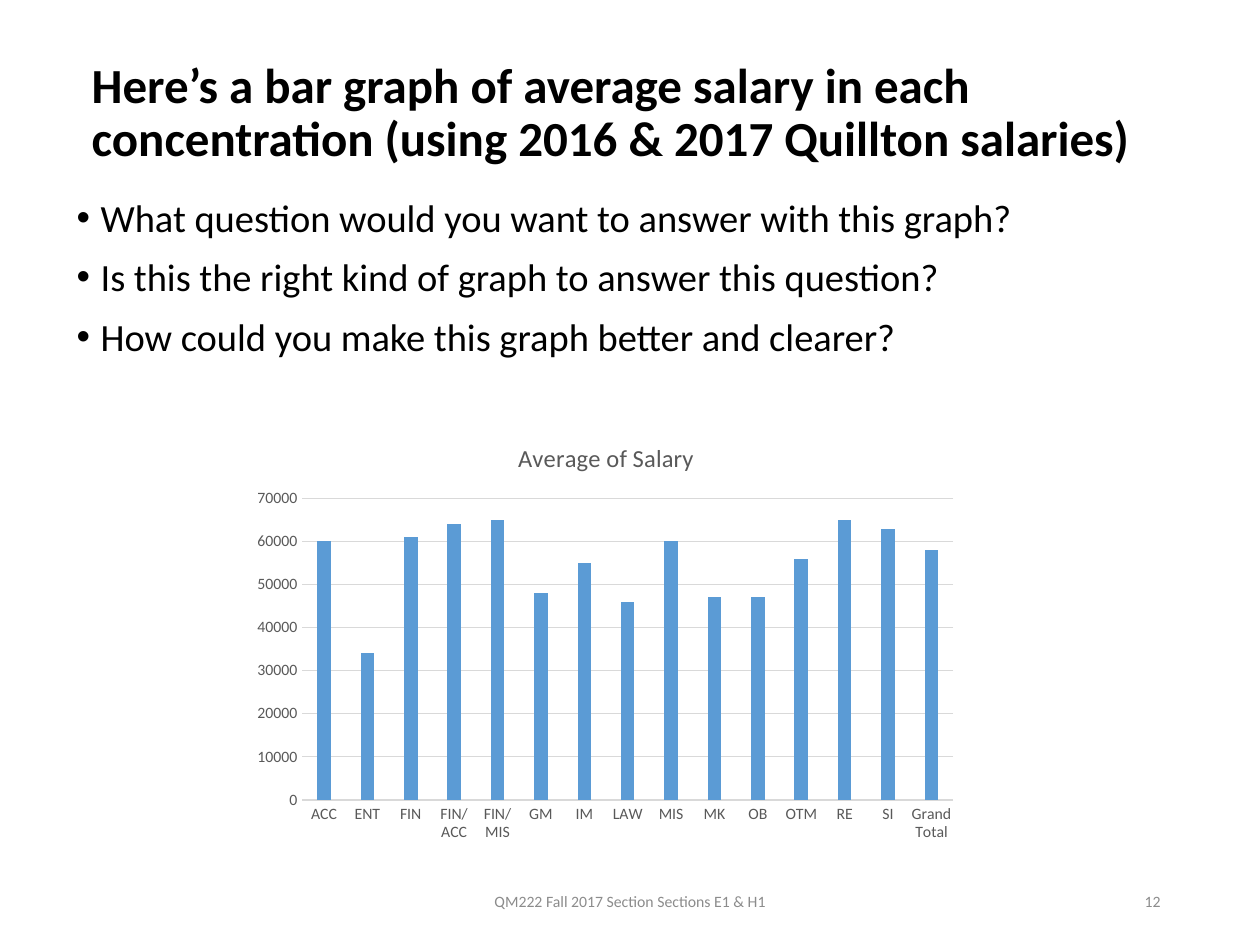
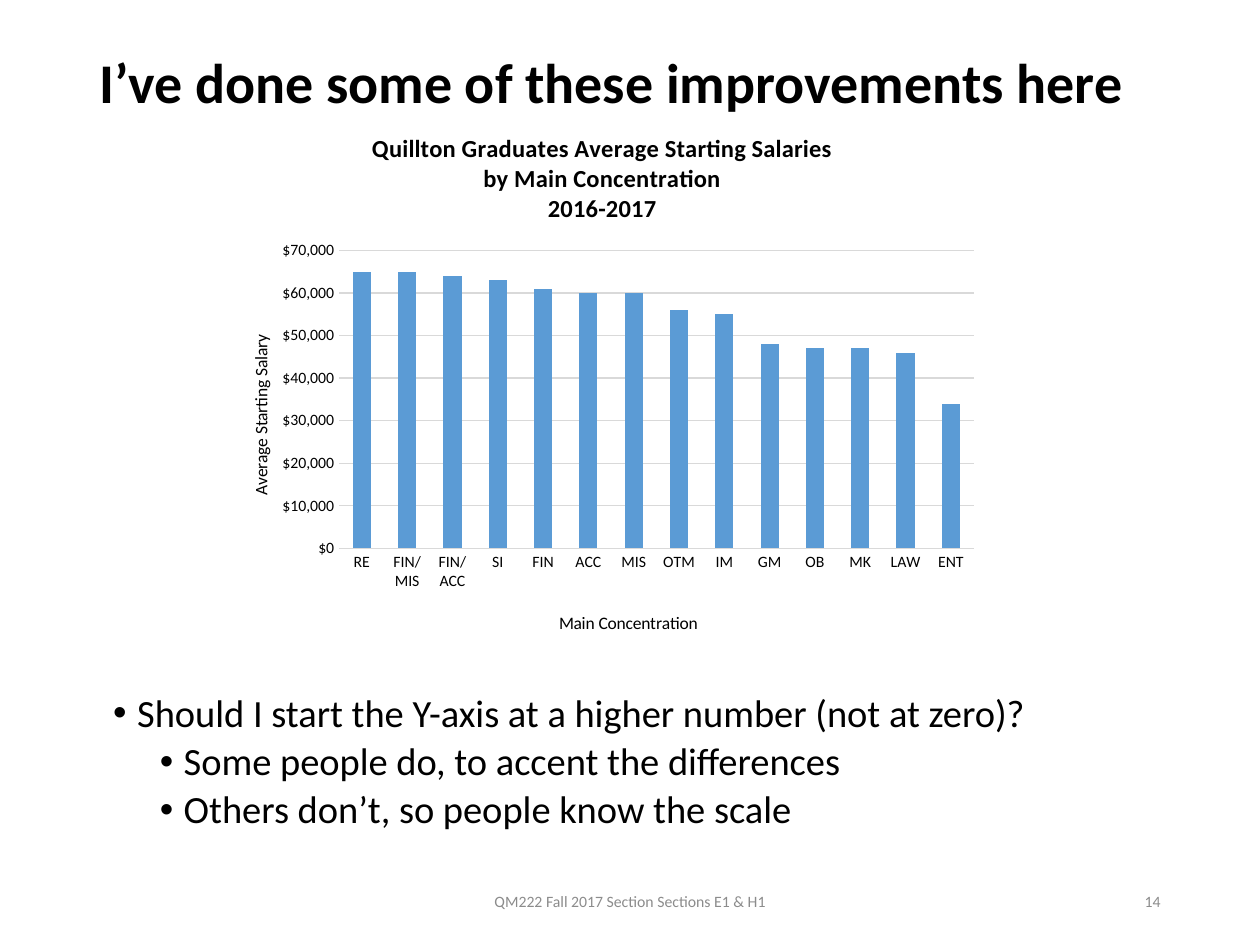
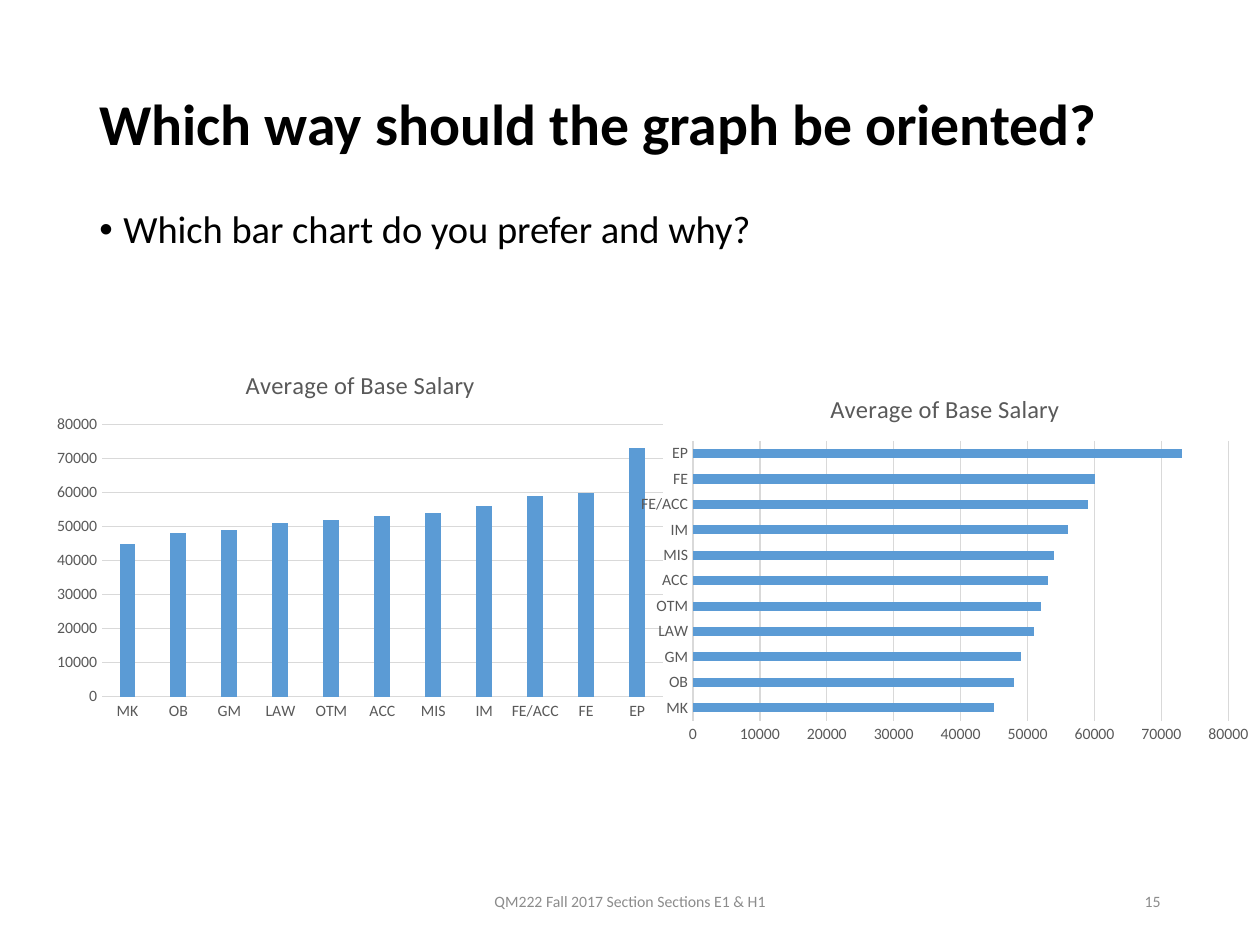
from dataclasses import dataclass

from lxml.etree import SubElement
from pptx import Presentation
from pptx.chart.data import CategoryChartData
from pptx.dml.color import RGBColor
from pptx.enum.chart import XL_CHART_TYPE, XL_TICK_MARK
from pptx.enum.text import MSO_ANCHOR, PP_ALIGN
from pptx.oxml import parse_xml
from pptx.oxml.ns import nsdecls, qn
from pptx.util import Inches, Pt


@dataclass(frozen=True)
class Theme:
    """Colours, font and type sizes shared by all slides."""
    font: str = "Calibri"
    black: RGBColor = RGBColor(0x00, 0x00, 0x00)
    chart_gray: RGBColor = RGBColor(0x59, 0x59, 0x59)
    footer_gray: RGBColor = RGBColor(0x8C, 0x8C, 0x8C)
    grid_gray: RGBColor = RGBColor(0xD9, 0xD9, 0xD9)
    bar_blue: RGBColor = RGBColor(0x5B, 0x9B, 0xD5)
    body_size: float = 22
    footer_size: float = 9
    chart_title_size: float = 14
    axis_title_size: float = 10
    label_size: float = 9
    rule_width: float = 0.75


@dataclass(frozen=True)
class Region:
    """An area on a grid of 100 columns by 75 rows."""
    column: float
    row: float
    columns: float
    rows: float

    def box(self):
        """Return left, top, width and height as lengths."""
        cells = (self.column, self.row, self.columns, self.rows)
        return [Inches(cell * SLIDE_WIDTH / GRID_COLUMNS) for cell in cells]


THEME = Theme()
SLIDE_WIDTH, SLIDE_HEIGHT, GRID_COLUMNS = 10, 7.5, 100
FOOTER_TEXT = "QM222 Fall 2017 Section Sections E1 & H1"
FOOTER_REGION = Region(33.1, 69.5, 33.8, 4)
NUMBER_REGION = Region(70.6, 69.5, 22.5, 4)
BULLET_HANG = 0.19
LEVEL_INDENTS = (0.19, 0.56)
LEVEL_SPACES = (7.5, 3.8)

SALARIES = {
    "ACC": 60000, "ENT": 34000, "FIN": 61000, "FIN/ACC": 64000, "FIN/MIS": 65000,
    "GM": 48000, "IM": 55000, "LAW": 46000, "MIS": 60000, "MK": 47000, "OB": 47000,
    "OTM": 56000, "RE": 65000, "SI": 63000, "Grand Total": 58000,
}
RANKING = ("RE", "FIN/MIS", "FIN/ACC", "SI", "FIN", "ACC", "MIS",
           "OTM", "IM", "GM", "OB", "MK", "LAW", "ENT")
BASE_SALARIES = {
    "MK": 45000, "OB": 48000, "GM": 49000, "LAW": 51000, "OTM": 52000, "ACC": 53000,
    "MIS": 54000, "IM": 56000, "FE/ACC": 59000, "FE": 60000, "EP": 73000,
}


def style_font(font, size, color, bold=False):
    """Apply the shared typeface with a size and a colour."""
    font.name = THEME.font
    font.size = Pt(size)
    font.bold = bold
    font.color.rgb = color


def add_run(paragraph, text, size, color, bold=False):
    """Append one styled run to a paragraph."""
    run = paragraph.add_run()
    run.text = text
    style_font(run.font, size, color, bold)


def add_text_frame(slide, region, anchor):
    """Add a wrapping text box and return its frame."""
    frame = slide.shapes.add_textbox(*region.box()).text_frame
    frame.word_wrap = True
    frame.vertical_anchor = anchor
    return frame


def add_line(slide, region, text, size, color, alignment, bold=False, spacing=1.0):
    """Add a vertically centred text box with one paragraph."""
    paragraph = add_text_frame(slide, region, MSO_ANCHOR.MIDDLE).paragraphs[0]
    paragraph.alignment = alignment
    paragraph.line_spacing = spacing
    add_run(paragraph, text, size, color, bold)


def add_slide(presentation, title, title_region, title_size, number):
    """Add a blank slide with its title, footer and number."""
    slide = presentation.slides.add_slide(presentation.slide_layouts[6])
    add_line(slide, title_region, title, title_size, THEME.black, PP_ALIGN.LEFT, True, 0.9)
    add_line(slide, FOOTER_REGION, FOOTER_TEXT, THEME.footer_size,
             THEME.footer_gray, PP_ALIGN.CENTER)
    add_line(slide, NUMBER_REGION, str(number), THEME.footer_size,
             THEME.footer_gray, PP_ALIGN.RIGHT)
    return slide


def add_bullets(slide, region, bullets, spacing=0.9):
    """Add bulleted paragraphs from pairs of level and text."""
    frame = add_text_frame(slide, region, MSO_ANCHOR.TOP)
    for index, (level, text) in enumerate(bullets):
        paragraph = frame.add_paragraph() if index else frame.paragraphs[0]
        paragraph.level = level
        paragraph.line_spacing = spacing
        paragraph.space_before = Pt(LEVEL_SPACES[level])
        properties = paragraph._p.get_or_add_pPr()
        properties.set("marL", str(Inches(LEVEL_INDENTS[level])))
        properties.set("indent", str(-Inches(BULLET_HANG)))
        SubElement(properties, qn("a:buFont")).set("typeface", "Arial")
        SubElement(properties, qn("a:buChar")).set("char", "•")
        add_run(paragraph, text, THEME.body_size, THEME.black)


def set_layout(element, inner=False, **shares):
    """Place a chart part at shares of the chart's size."""
    for previous in element.findall(qn("c:layout")):
        element.remove(previous)
    target = '<c:layoutTarget val="inner"/>' if inner else ""
    modes = "".join(f'<c:{key}Mode val="edge"/>' for key in ("x", "y"))
    places = "".join(f'<c:{key} val="{share}"/>' for key, share in shares.items())
    layout = parse_xml(f'<c:layout {nsdecls("c")}><c:manualLayout>{target}{modes}{places}'
                       '</c:manualLayout></c:layout>')
    text = element.find(qn("c:tx"))
    element.insert(0 if text is None else element.index(text) + 1, layout)


def write_title(title, lines, size, color, bold=False):
    """Write the lines of a chart or axis title."""
    frame = title.text_frame
    for index, line in enumerate(lines):
        paragraph = frame.add_paragraph() if index else frame.paragraphs[0]
        add_run(paragraph, line, size, color, bold)


def style_axis(axis, color):
    """Style the tick labels and remove the tick marks."""
    axis.major_tick_mark = axis.minor_tick_mark = XL_TICK_MARK.NONE
    style_font(axis.tick_labels.font, THEME.label_size, color)


def style_rule(line):
    """Give an axis or grid line the thin gray style."""
    line.color.rgb = THEME.grid_gray
    line.width = Pt(THEME.rule_width)


def add_bar_chart(slide, region, values, title_lines, plot_shares, kind=XL_CHART_TYPE.COLUMN_CLUSTERED,
                  gap=219, overlap=-27, color=THEME.chart_gray, bold=False, number_format="General"):
    """Add a single-series bar chart and return it."""
    data = CategoryChartData()
    data.categories = list(values)
    data.add_series(title_lines[0], list(values.values()))
    chart = slide.shapes.add_chart(kind, *region.box(), data).chart
    style_font(chart.font, THEME.axis_title_size, THEME.black)
    chart.has_legend = False
    chart.has_title = True
    write_title(chart.chart_title, title_lines, THEME.chart_title_size, color, bold)
    chart.chart_title.include_in_layout = False

    plot = chart.plots[0]
    plot.vary_by_categories = False
    plot.gap_width, plot.overlap = gap, overlap
    fill = plot.series[0].format.fill
    fill.solid()
    fill.fore_color.rgb = THEME.bar_blue

    for axis in (chart.category_axis, chart.value_axis):
        style_axis(axis, color)
    style_rule(chart.category_axis.format.line)
    chart.value_axis.format.line.fill.background()
    chart.value_axis.has_major_gridlines = True
    style_rule(chart.value_axis.major_gridlines.format.line)
    labels = chart.value_axis.tick_labels
    labels.number_format, labels.number_format_is_linked = number_format, False

    plot_area = next(chart.element.iter(qn("c:plotArea")))
    set_layout(plot_area, True, **dict(zip("xywh", plot_shares)))
    return chart


def add_axis_title(axis, text, x, y):
    """Title an axis at shares of the chart's size."""
    axis.has_title = True
    write_title(axis.axis_title, [text], THEME.axis_title_size, THEME.black)
    set_layout(axis.axis_title.element, x=x, y=y)


def add_first_graph(presentation):
    """Build the slide that questions the first graph."""
    slide = add_slide(
        presentation,
        "Here’s a bar graph of average salary in each concentration (using 2016 & 2017 Quillton salaries)",
        Region(6.3, 1.8, 88.3, 14.5), 28, 12)
    add_bullets(slide, Region(5.1, 14.9, 86.2, 16.2), [
        (0, "What question would you want to answer with this graph?"),
        (0, "Is this the right kind of graph to answer this question?"),
        (0, "How could you make this graph better and clearer?"),
    ], spacing=1.0)
    add_bar_chart(slide, Region(19.4, 33.4, 57.4, 34.2), SALARIES,
                  ["Average of Salary"], (0.08, 0.18, 0.9, 0.7))


def add_improved_graph(presentation):
    """Build the slide with the sorted and labelled graph."""
    slide = add_slide(presentation, "I’ve done some of these improvements here",
                      Region(6.9, 0.4, 86.2, 12.7), 32, 14)
    add_bullets(slide, Region(8, 54.6, 86.2, 13.8), [
        (0, "Should I start the Y-axis at a higher number (not at zero)?"),
        (1, "Some people do, to accent the differences"),
        (1, "Others don’t, so people know the scale"),
    ])
    ranked = {name: SALARIES[name] for name in RANKING}
    chart = add_bar_chart(
        slide, Region(17.1, 8.7, 61.4, 43), ranked,
        ["Quillton Graduates Average Starting Salaries", "by Main Concentration", "2016-2017"],
        (0.16, 0.26, 0.82, 0.55), gap=150, color=THEME.black, bold=True, number_format='"$"#,##0')
    add_axis_title(chart.category_axis, "Main Concentration", 0.44, 0.92)
    add_axis_title(chart.value_axis, "Average Starting Salary", 0.04, 0.41)


def add_orientations(presentation):
    """Build the slide that compares upright and sideways bars."""
    slide = add_slide(presentation, "Which way should the graph be oriented?",
                      Region(6.9, 4, 86.2, 12.2), 33, 15)
    add_bullets(slide, Region(6.9, 16.2, 86.2, 10.1),
                [(0, "Which bar chart do you prefer and why?")])
    title = ["Average of Base Salary"]
    add_bar_chart(slide, Region(3.6, 27.7, 50, 30), BASE_SALARIES, title, (0.09, 0.2, 0.89, 0.72))
    add_bar_chart(slide, Region(50, 29.6, 50, 30), BASE_SALARIES, title, (0.1, 0.18, 0.85, 0.74),
                  XL_CHART_TYPE.BAR_CLUSTERED, gap=182, overlap=0)


def main():
    """Build and save the presentation."""
    presentation = Presentation()
    presentation.slide_width = Inches(SLIDE_WIDTH)
    presentation.slide_height = Inches(SLIDE_HEIGHT)
    add_first_graph(presentation)
    add_improved_graph(presentation)
    add_orientations(presentation)
    presentation.save("out.pptx")


if __name__ == "__main__":
    main()
